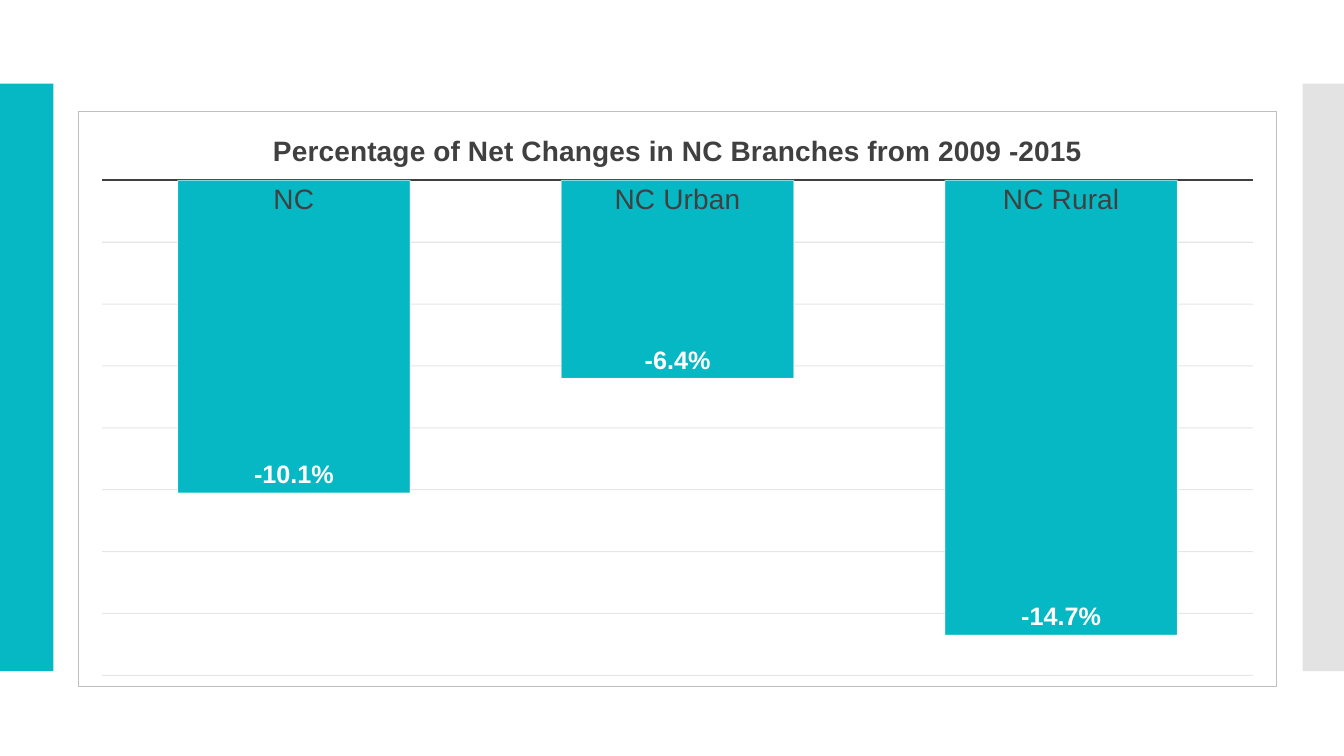
from dataclasses import dataclass

from lxml.etree import SubElement
from pptx import Presentation
from pptx.chart.data import CategoryChartData
from pptx.dml.color import RGBColor
from pptx.enum.chart import XL_CHART_TYPE, XL_LABEL_POSITION, XL_TICK_MARK
from pptx.enum.shapes import MSO_SHAPE
from pptx.oxml import parse_xml
from pptx.oxml.ns import nsdecls, qn
from pptx.util import Inches, Pt


@dataclass(frozen=True)
class Theme:
    teal: str = "06B8C3"
    gray: str = "C8C8C8"
    text: str = "404040"
    white: str = "FFFFFF"
    black: str = "000000"
    grid: str = "0D0D0D"
    border: str = "BFBFBF"
    font: str = "Arial"
    chart_font: str = "Cabin"
    chart_size: int = 10
    title_size: int = 20
    label_size: int = 18


theme = Theme()


def style_font(font, size, color, name=theme.font, bold=False):
    font.size = Pt(size)
    font.color.rgb = RGBColor.from_string(color)
    font.name = name
    font.bold = bold


def set_opacity(element, percent):
    """Add transparency to every colour inside the element."""
    for color in element.iter(qn("a:srgbClr")):
        SubElement(color, qn("a:alpha")).set("val", str(percent * 1000))


presentation = Presentation()
presentation.slide_width = Inches(13.33)
presentation.slide_height = Inches(7.5)
slide = presentation.slides.add_slide(presentation.slide_layouts[6])

# Side bands
for left, width, color, opacity in [
    (0, 0.53, theme.teal, 100),
    (12.92, 0.41, theme.gray, 50),
]:
    band = slide.shapes.add_shape(
        MSO_SHAPE.RECTANGLE, Inches(left), Inches(0.83), Inches(width), Inches(5.83)
    )
    band.shadow.inherit = False
    band.fill.solid()
    band.fill.fore_color.rgb = RGBColor.from_string(color)
    band.line.fill.background()
    if opacity < 100:
        set_opacity(band.element.spPr, opacity)

# Branch chart
chart_data = CategoryChartData(number_format="0.0%")
chart_data.categories = ["NC", "NC Urban", "NC Rural"]
chart_data.add_series("Series 1", [-0.101, -0.064, -0.147])
chart = slide.shapes.add_chart(
    XL_CHART_TYPE.COLUMN_CLUSTERED,
    Inches(0.77), Inches(1.1), Inches(11.9), Inches(5.72),
    chart_data,
).chart
chart_xml = chart.element
style_font(chart.font, theme.chart_size, theme.black, theme.chart_font)
chart.has_legend = False

chart.has_title = True
chart.chart_title.include_in_layout = False
title_run = chart.chart_title.text_frame.paragraphs[0].add_run()
title_run.text = "Percentage of Net Changes in NC Branches from 2009 -2015"
style_font(title_run.font, theme.title_size, theme.text, bold=True)

category_axis = chart.category_axis
category_axis.major_tick_mark = XL_TICK_MARK.NONE
category_axis.format.line.color.rgb = RGBColor.from_string(theme.text)
category_axis.format.line.width = Pt(1.5)
style_font(category_axis.tick_labels.font, theme.title_size, theme.text)

value_axis = chart.value_axis
value_axis.minimum_scale = -0.16
value_axis.maximum_scale = 0
value_axis.major_unit = 0.02
value_axis.visible = False
value_axis.has_major_gridlines = True
gridlines = value_axis.major_gridlines.format.line
gridlines.color.rgb = RGBColor.from_string(theme.grid)
gridlines.width = Pt(0.75)
set_opacity(chart_xml.find(".//" + qn("c:majorGridlines")), 10)

plot = chart.plots[0]
plot.gap_width = 65
plot.vary_by_categories = False
series = plot.series[0]
series.invert_if_negative = False
series.format.fill.solid()
series.format.fill.fore_color.rgb = RGBColor.from_string(theme.teal)
series.format.line.color.rgb = RGBColor.from_string(theme.white)
series.format.line.width = Pt(0.75)
series_xml = chart_xml.find(".//" + qn("c:ser"))
set_opacity(series_xml.find(".//" + qn("a:ln")), 50)

labels = series.data_labels
labels.show_value = True
labels.position = XL_LABEL_POSITION.INSIDE_END
labels.number_format = "0.0%"
labels.number_format_is_linked = False
style_font(labels.font, theme.label_size, theme.white, bold=True)

# Chart frame and plot position
chart_xml.find(qn("c:chart")).addnext(parse_xml(
    f'<c:spPr {nsdecls("c", "a")}>'
    f'<a:solidFill><a:srgbClr val="{theme.white}"/></a:solidFill>'
    f'<a:ln w="{Pt(0.75)}"><a:solidFill><a:srgbClr val="{theme.border}"/></a:solidFill></a:ln>'
    "</c:spPr>"
))
plot_area = chart_xml.find(".//" + qn("c:plotArea"))
for layout in plot_area.findall(qn("c:layout")):
    plot_area.remove(layout)
plot_area.insert(0, parse_xml(
    f'<c:layout {nsdecls("c")}><c:manualLayout><c:layoutTarget val="inner"/>'
    '<c:xMode val="edge"/><c:yMode val="edge"/>'
    '<c:x val="0.02"/><c:y val="0.12"/><c:w val="0.96"/><c:h val="0.86"/>'
    "</c:manualLayout></c:layout>"
))

presentation.save("out.pptx")
